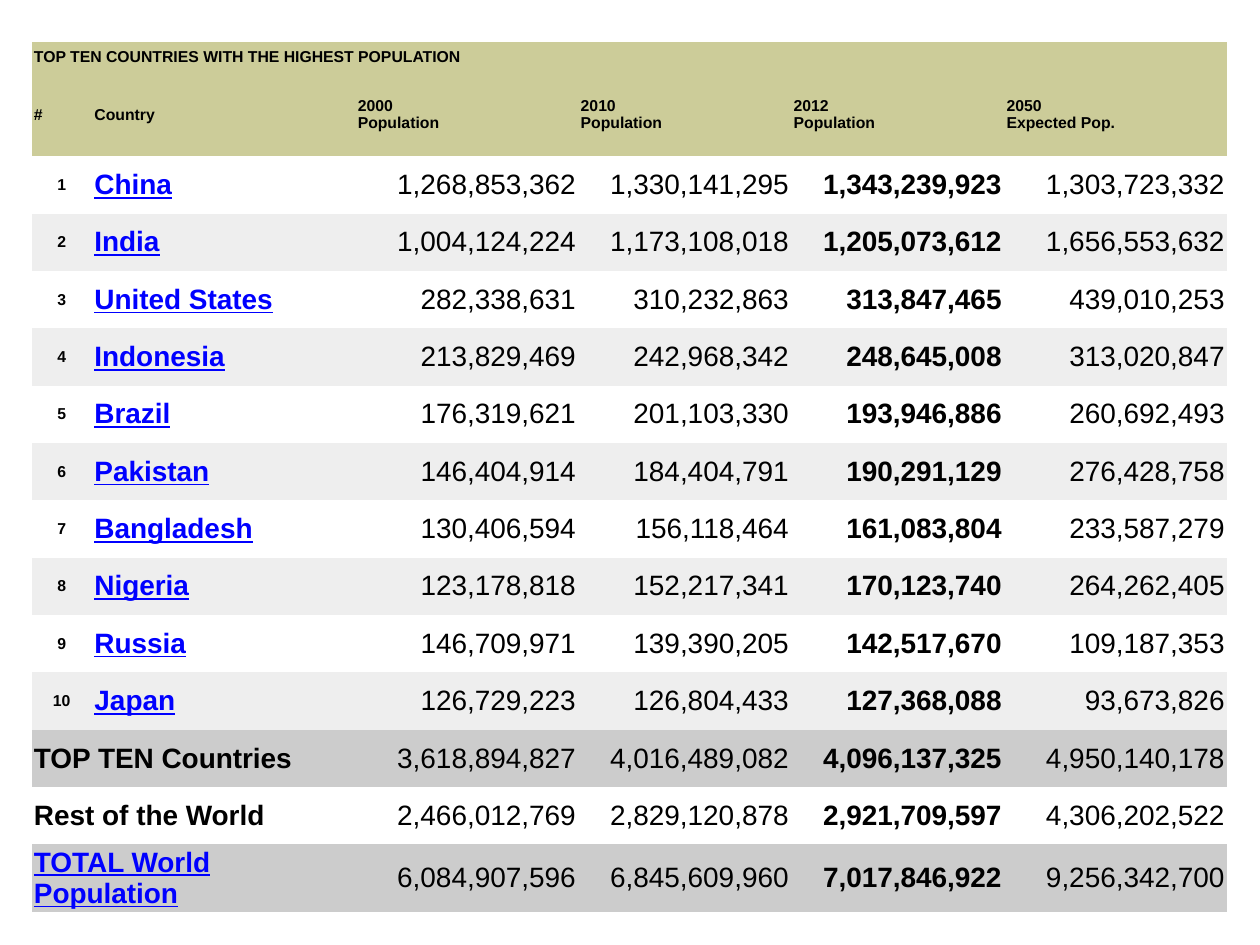
import lxml.etree
import pptx
import pptx.dml.color
import pptx.enum.text
import pptx.oxml.ns
import pptx.util

Inches = pptx.util.Inches
RGBColor = pptx.dml.color.RGBColor
Align = pptx.enum.text.PP_ALIGN

BLACK = RGBColor(0x00, 0x00, 0x00)
LINK_BLUE = RGBColor(0x00, 0x00, 0xFF)
KHAKI = RGBColor(0xCC, 0xCC, 0x99)
WHITE = RGBColor(0xFF, 0xFF, 0xFF)
LIGHT_GREY = RGBColor(0xEE, 0xEE, 0xEE)
GREY = RGBColor(0xCC, 0xCC, 0xCC)

PLAIN_TABLE_STYLE = "{2D5ABB26-0587-4C30-8999-92F81FD0307C}"
COLUMN_WIDTHS = [0.48, 2.09, 1.77, 1.69, 1.69, 1.77]
BODY_ROW_HEIGHT = 5.92 / 13
SMALL, LARGE = 9, 16
BOLD_COLUMN = 4

TITLE = "TOP TEN COUNTRIES WITH THE HIGHEST POPULATION"
HEADERS = ["#", "Country", "2000\vPopulation", "2010\vPopulation",
           "2012\vPopulation", "2050\vExpected Pop."]
COUNTRIES = [
    ("China", "1,268,853,362", "1,330,141,295", "1,343,239,923", "1,303,723,332"),
    ("India", "1,004,124,224", "1,173,108,018", "1,205,073,612", "1,656,553,632"),
    ("United States", "282,338,631", "310,232,863", "313,847,465", "439,010,253"),
    ("Indonesia", "213,829,469", "242,968,342", "248,645,008", "313,020,847"),
    ("Brazil", "176,319,621", "201,103,330", "193,946,886", "260,692,493"),
    ("Pakistan", "146,404,914", "184,404,791", "190,291,129", "276,428,758"),
    ("Bangladesh", "130,406,594", "156,118,464", "161,083,804", "233,587,279"),
    ("Nigeria", "123,178,818", "152,217,341", "170,123,740", "264,262,405"),
    ("Russia", "146,709,971", "139,390,205", "142,517,670", "109,187,353"),
    ("Japan", "126,729,223", "126,804,433", "127,368,088", "93,673,826"),
]
TOTALS = [
    ("TOP TEN Countries", "3,618,894,827", "4,016,489,082", "4,096,137,325", "4,950,140,178"),
    ("Rest of the World", "2,466,012,769", "2,829,120,878", "2,921,709,597", "4,306,202,522"),
    ("TOTAL World Population", "6,084,907,596", "6,845,609,960", "7,017,846,922", "9,256,342,700"),
]


class SlideBuilder:
    """Holds the text style and the current slide, and adds elements to it."""

    def __init__(self, slide, font_name="Arial", margin=0.02):
        self.slide = slide
        self.font_name = font_name
        self.margin = Inches(margin)

    def table(self, left, top, widths, heights):
        frame = self.slide.shapes.add_table(
            len(heights), len(widths), Inches(left), Inches(top),
            Inches(sum(widths)), Inches(sum(heights)))
        table = frame.table
        table.first_row = table.horz_banding = False
        style = table._tbl.tblPr.find(pptx.oxml.ns.qn("a:tableStyleId"))
        style.text = PLAIN_TABLE_STYLE
        for column, width in zip(table.columns, widths):
            column.width = Inches(width)
        for row, height in zip(table.rows, heights):
            row.height = Inches(height)
        return table

    def cell(self, cell, text, fill, size=LARGE, bold=True, link=False, align=Align.LEFT):
        cell.fill.solid()
        cell.fill.fore_color.rgb = fill
        cell.vertical_anchor = pptx.enum.text.MSO_ANCHOR.MIDDLE
        cell.margin_left = cell.margin_right = self.margin
        cell.margin_top = cell.margin_bottom = self.margin
        para = cell.text_frame.paragraphs[0]
        para.text = text
        para.alignment = align
        for span in para.runs:
            span.font.name = self.font_name
            span.font.size = pptx.util.Pt(size)
            span.font.bold = bold
            span.font.underline = link
            span.font.color.rgb = LINK_BLUE if link else BLACK
        for line_break in para._p.findall(pptx.oxml.ns.qn("a:br")):
            lxml.etree.SubElement(
                line_break, pptx.oxml.ns.qn("a:rPr"), sz=str(size * 100))

    def figures(self, table, row, values, fill):
        for column, value in enumerate(values, start=2):
            self.cell(table.cell(row, column), value, fill,
                      bold=column == BOLD_COLUMN, align=Align.RIGHT)


def main():
    deck = pptx.Presentation()
    deck.slide_width, deck.slide_height = Inches(10), Inches(7.5)
    builder = SlideBuilder(deck.slides.add_slide(deck.slide_layouts[6]))

    body_count = len(COUNTRIES) + len(TOTALS)
    table = builder.table(0.25, 0.33, COLUMN_WIDTHS,
                          [0.25, 0.66] + [BODY_ROW_HEIGHT] * body_count)

    table.cell(0, 0).merge(table.cell(0, len(COLUMN_WIDTHS) - 1))
    builder.cell(table.cell(0, 0), TITLE, KHAKI, size=SMALL)
    for column, header in enumerate(HEADERS):
        builder.cell(table.cell(1, column), header, KHAKI, size=SMALL)

    for rank, (country, *values) in enumerate(COUNTRIES, start=1):
        row = rank + 1
        fill = WHITE if rank % 2 else LIGHT_GREY
        builder.cell(table.cell(row, 0), str(rank), fill, size=SMALL, align=Align.CENTER)
        builder.cell(table.cell(row, 1), country, fill, link=True)
        builder.figures(table, row, values, fill)

    for index, (label, *values) in enumerate(TOTALS):
        row = len(COUNTRIES) + 2 + index
        fill = WHITE if index % 2 else GREY
        table.cell(row, 0).merge(table.cell(row, 1))
        builder.cell(table.cell(row, 0), label, fill, link=index == len(TOTALS) - 1)
        builder.figures(table, row, values, fill)

    deck.save("out.pptx")


if __name__ == "__main__":
    main()
